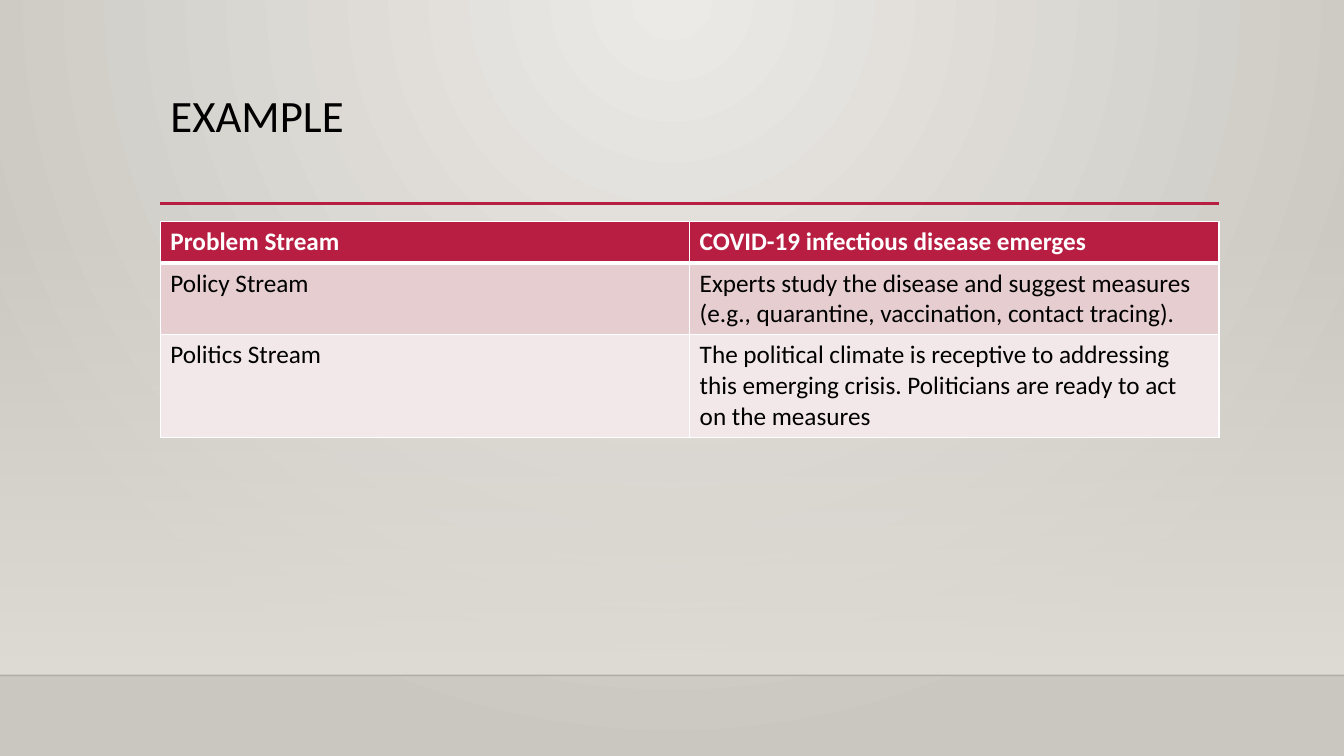
from lxml.etree import SubElement
from pptx import Presentation
from pptx.dml.color import RGBColor
from pptx.enum.shapes import MSO_CONNECTOR, MSO_SHAPE
from pptx.enum.text import MSO_ANCHOR, PP_ALIGN
from pptx.oxml.ns import qn
from pptx.util import Inches, Pt

TITLE = "EXAMPLE"
STREAMS = [
    ("Problem Stream", "COVID-19 infectious disease emerges"),
    ("Policy Stream", "Experts study the disease and suggest measures "
                      "(e.g., quarantine, vaccination, contact tracing)."),
    ("Politics Stream", "The political climate is receptive to addressing this emerging crisis. "
                        "Politicians are ready to act on the measures"),
]
COLORS = {
    "glow": "ECEAE7", "edge": "CAC7C1", "floor": "DFDBD5", "floor_line": "000001",
    "accent": "B71E42", "odd": "E6CDCF", "even": "F3E8E9",
    "text": "000000", "white": "FFFFFF",
}
ROW_FILLS = ["accent", "odd", "even"]
ROW_HEIGHTS = [0.41, 0.7, 1.02]
WIDTH, HEIGHT = 13.33, 7.5
LEFT, CONTENT_WIDTH = 1.59, 10.5
TABLE_TOP, FLOOR_TOP, FLOOR_LINE = 2.2, 2.21, 6.7


def rgb(name):
    return RGBColor.from_string(COLORS[name])


def format_font(font, **values):
    font.color.rgb = rgb(values.pop("color"))
    for name, value in {"name": "Calibri", **values}.items():
        setattr(font, name, value)


def set_gradient(fill, names):
    fill.gradient()
    for stop, name in zip(fill.gradient_stops, names):
        stop.color.rgb = rgb(name)


def set_alpha(color_element, percent):
    SubElement(color_element, qn("a:alpha"), val=str(percent * 1000))


def add_background(slide):
    set_gradient(slide.background.fill, ["glow", "edge"])
    gradient = next(slide.element.iter(qn("a:gradFill")))
    gradient.remove(gradient.find(qn("a:lin")))
    circle = SubElement(gradient, qn("a:path"), path="circle")
    SubElement(circle, qn("a:fillToRect"), l="43000", t="0", r="43000", b="100000")


def add_floor(slide):
    floor = slide.shapes.add_shape(MSO_SHAPE.RECTANGLE, 0, Inches(FLOOR_TOP),
                                   Inches(WIDTH), Inches(FLOOR_LINE - FLOOR_TOP))
    floor.shadow.inherit = False
    floor.line.fill.background()
    set_gradient(floor.fill, ["floor", "floor"])
    floor.fill.gradient_angle = 270
    set_alpha(next(floor.element.iter(qn("a:srgbClr"))), 0)


def add_rule(slide, left, right, top, color, width):
    rule = slide.shapes.add_connector(MSO_CONNECTOR.STRAIGHT, Inches(left), Inches(top),
                                      Inches(right), Inches(top))
    rule.line.color.rgb = rgb(color)
    rule.line.width = Pt(width)
    SubElement(rule.element.spPr, qn("a:effectLst"))
    return rule


def add_title(slide):
    title = slide.shapes.title
    title.left, title.top = Inches(LEFT), Inches(0.88)
    title.width, title.height = Inches(CONTENT_WIDTH), Inches(1.15)
    title.text_frame.text = TITLE
    title.text_frame.vertical_anchor = MSO_ANCHOR.TOP
    paragraph = title.text_frame.paragraphs[0]
    paragraph.alignment = PP_ALIGN.LEFT
    paragraph.line_spacing = 0.9
    format_font(paragraph.runs[0].font, color="text", size=Pt(32))


def set_borders(cell, widths):
    """Draw white borders; they must precede the cell's fill in the XML."""
    properties = cell._tc.get_or_add_tcPr()
    for side, width in widths.items():
        border = SubElement(properties, qn(f"a:ln{side}"), w=str(Pt(width)))
        solid = SubElement(border, qn("a:solidFill"))
        SubElement(solid, qn("a:srgbClr"), val=COLORS["white"])


def add_stream_table(slide):
    frame = slide.shapes.add_table(len(STREAMS), 2, Inches(LEFT), Inches(TABLE_TOP),
                                   Inches(CONTENT_WIDTH), Inches(sum(ROW_HEIGHTS)))
    table = frame.table
    for row_index, texts in enumerate(STREAMS):
        table.rows[row_index].height = Inches(ROW_HEIGHTS[row_index])
        header = row_index == 0
        widths = {"L": 1, "R": 1, "T": 3 if row_index == 1 else 1, "B": 3 if header else 1}
        for column_index, text in enumerate(texts):
            cell = table.cell(row_index, column_index)
            set_borders(cell, widths)
            cell.fill.solid()
            cell.fill.fore_color.rgb = rgb(ROW_FILLS[row_index])
            cell.text = text
            format_font(cell.text_frame.paragraphs[0].runs[0].font, size=Pt(18),
                        bold=header, color="white" if header else "text")


def main():
    presentation = Presentation()
    presentation.slide_width = Inches(WIDTH)
    presentation.slide_height = Inches(HEIGHT)
    slide = presentation.slides.add_slide(presentation.slide_layouts[5])
    add_background(slide)
    add_floor(slide)
    floor_rule = add_rule(slide, 0, WIDTH, FLOOR_LINE, "floor_line", 1)
    set_alpha(next(floor_rule.element.iter(qn("a:srgbClr"))), 20)
    add_rule(slide, LEFT, LEFT + CONTENT_WIDTH, 2.02, "accent", 2.5)
    add_title(slide)
    add_stream_table(slide)
    presentation.save("out.pptx")


if __name__ == "__main__":
    main()
